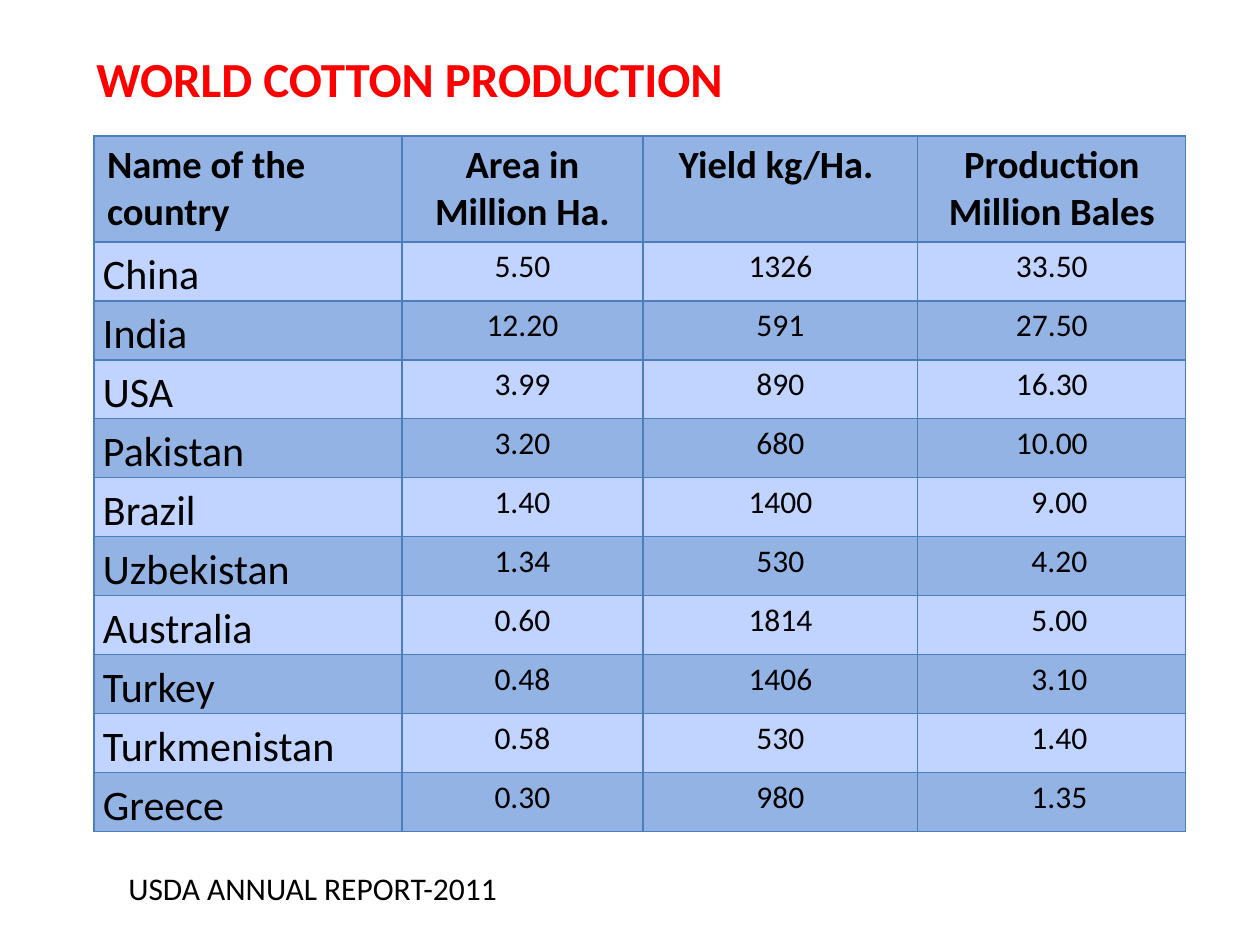
from dataclasses import dataclass
from lxml.etree import SubElement
from pptx import Presentation
from pptx.dml.color import RGBColor
from pptx.enum.text import MSO_AUTO_SIZE, PP_ALIGN
from pptx.oxml.ns import qn
from pptx.util import Emu, Pt

TITLE = "WORLD COTTON PRODUCTION"
SOURCE = "USDA ANNUAL REPORT-2011"
HEADS = ["Name of the country", "Area in Million Ha.", "Yield kg/Ha. ",
         "Production Million Bales"]
ROWS = [
    ("China", "5.50", "1326", "33.50"),
    ("India", "12.20", "591", "27.50"),
    ("USA", "3.99", "890", "16.30"),
    ("Pakistan", "3.20", "680", "10.00"),
    ("Brazil", "1.40", "1400", "9.00"),
    ("Uzbekistan", "1.34", "530", "4.20"),
    ("Australia", "0.60", "1814", "5.00"),
    ("Turkey", "0.48", "1406", "3.10"),
    ("Turkmenistan", "0.58", "530", "1.40"),
    ("Greece", "0.30", "980", "1.35"),
]
WIDTHS = [308, 241, 275, 268]
HEAD_H, ROW_H = 106, 59
PAD = (13, 6, 13, 6)
NAME_PAD = (9, 0, 9, 0)
SHORT_PAD = (28, 6, 13, 6)  # lines up short figures with the longer ones


@dataclass(frozen=True)
class Theme:
    font: str = "Calibri"
    ink: str = "000000"
    red: str = "FF0000"
    dark: str = "93B3E4"
    light: str = "C0D4FF"
    edge: str = "4B7EBC"
    title: int = 28
    head: int = 22
    name: int = 24
    body: int = 18


T = Theme()


def px(n):
    return Emu(round(n * 914400 / 126))


def write(frame, text, size, color=T.ink, bold=False, center=False, line=None):
    frame.word_wrap = True
    par = frame.paragraphs[0]
    par.alignment = PP_ALIGN.CENTER if center else PP_ALIGN.LEFT
    if line:
        par.line_spacing = line
    run = par.add_run()
    run.text = text
    font = run.font
    font.name, font.size, font.bold = T.font, Pt(size), bold
    font.color.rgb = RGBColor.from_string(color)


def add_text(slide, box, text, size, **form):
    frame = slide.shapes.add_textbox(*map(px, box)).text_frame
    frame.auto_size = MSO_AUTO_SIZE.SHAPE_TO_FIT_TEXT
    write(frame, text, size, **form)


def style(cell, fill, pad):
    """Set the borders, fill and margins of a cell."""
    props = cell._tc.get_or_add_tcPr()
    for side in ("a:lnL", "a:lnR", "a:lnT", "a:lnB"):
        line = SubElement(props, qn(side), w=str(Pt(0.75)))
        SubElement(SubElement(line, qn("a:solidFill")), qn("a:srgbClr"), val=T.edge)
    cell.fill.solid()
    cell.fill.fore_color.rgb = RGBColor.from_string(fill)
    (cell.margin_left, cell.margin_top,
     cell.margin_right, cell.margin_bottom) = map(px, pad)


def add_grid(slide, left, top):
    high = HEAD_H + ROW_H * len(ROWS)
    box = (left, top, sum(WIDTHS), high)
    grid = slide.shapes.add_table(len(ROWS) + 1, len(HEADS), *map(px, box)).table
    for col, wide in zip(grid.columns, WIDTHS):
        col.width = px(wide)
    for r, row in enumerate([HEADS, *ROWS]):
        grid.rows[r].height = px(ROW_H if r else HEAD_H)
        for c, text in enumerate(row):
            cell = grid.cell(r, c)
            pad, form = PAD, {"size": T.body, "center": c > 0}
            if r == 0:
                form.update(size=T.head, bold=True)
            elif c == 0:
                pad = NAME_PAD
                form.update(size=T.name, line=1.15)
            elif c == 3 and len(text) < 5:
                pad = SHORT_PAD
            style(cell, T.light if r % 2 else T.dark, pad)
            write(cell.text_frame, text, **form)


def main():
    deck = Presentation()
    deck.slide_width, deck.slide_height = px(1260), px(945)
    slide = deck.slides.add_slide(deck.slide_layouts[6])
    add_grid(slide, 94, 136)
    add_text(slide, (116, 863, 746, 51), SOURCE, T.body)
    add_text(slide, (84, 42, 1071, 72), TITLE, T.title, color=T.red, bold=True)
    deck.save("out.pptx")


if __name__ == "__main__":
    main()
